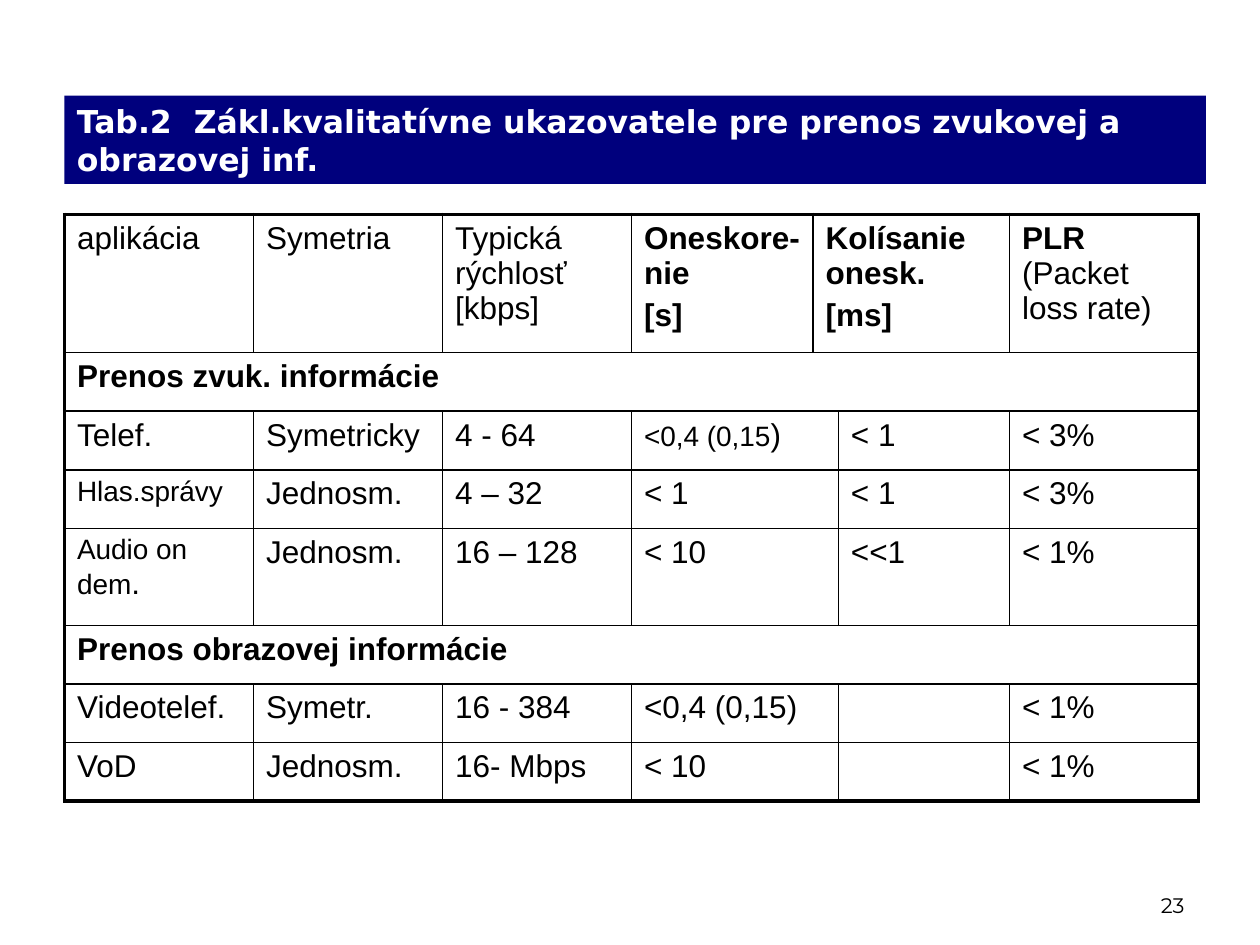
import dataclasses

import lxml.etree
import pptx
import pptx.dml.color
import pptx.enum.shapes
import pptx.enum.text
import pptx.oxml.ns
import pptx.util

Cm, Pt = pptx.util.Cm, pptx.util.Pt
qn = pptx.oxml.ns.qn
MSO_ANCHOR, PP_ALIGN = pptx.enum.text.MSO_ANCHOR, pptx.enum.text.PP_ALIGN

BLACK, WHITE, NAVY = "000000", "FFFFFF", "00007D"
NO_TABLE_STYLE = "{2D5ABB26-0587-4C30-8999-92F81FD0307C}"
THIN, THICK = Pt(1), Pt(2.25)


@dataclasses.dataclass
class Span:
    text: str
    size: float = 18
    bold: bool = False
    font: str = "Arial"
    color: str = BLACK


@dataclasses.dataclass
class Entry:
    """One table cell: its paragraphs and the number of columns it covers."""
    paras: list[list[Span]]
    width: int = 1


def plain(text: str, width: int = 1, size: float = 18) -> Entry:
    return Entry([[Span(text, size)]] if text else [], width)


def strong(*lines: str, width: int = 1) -> Entry:
    return Entry([[Span(line, bold=True)] for line in lines], width)


def mixed(*spans: Span, width: int = 1) -> Entry:
    return Entry([list(spans)], width)


COLUMNS = [3.81, 3.81, 3.81, 3.66, 0.51, 3.45, 3.81]
ROWS = [2.79, 1.18, 1.18, 1.18, 1.96, 1.18, 1.18, 1.18]
ENTRIES = [
    [plain("aplikácia"), plain("Symetria"), plain("Typická rýchlosť [kbps]"),
     strong("Oneskore-nie", "[s]"), strong("Kolísanie onesk.", "[ms]", width=2),
     mixed(Span("PLR ", bold=True), Span("(Packet loss rate)"))],
    [strong("Prenos zvuk. informácie", width=7)],
    [plain("Telef."), plain("Symetricky"), plain("4 - 64"),
     mixed(Span("<0,4 (0,15", 16), Span(")"), width=2), plain("< 1"), plain("< 3%")],
    [plain("Hlas.správy", size=16), plain("Jednosm."), plain("4 – 32"),
     plain("< 1", 2), plain("< 1"), plain("< 3%")],
    [mixed(Span("Audio on dem", 16), Span(".")), plain("Jednosm."), plain("16 – 128"),
     plain("< 10", 2), plain("<<1"), plain("< 1%")],
    [strong("Prenos obrazovej informácie", width=7)],
    [plain("Videotelef."), plain("Symetr."), plain("16 - 384"),
     plain("<0,4 (0,15)", 2), plain(""), plain("< 1%")],
    [plain("VoD"), plain("Jednosm."), plain("16- Mbps"),
     plain("< 10", 2), plain(""), plain("< 1%")],
]


def rgb(value: str) -> pptx.dml.color.RGBColor:
    return pptx.dml.color.RGBColor.from_string(value)


def write(frame, paras: list[list[Span]], before: float = 0, align=PP_ALIGN.LEFT) -> None:
    frame.word_wrap = True
    for index, spans in enumerate(paras):
        para = frame.add_paragraph() if index else frame.paragraphs[0]
        para.alignment = align
        para.space_before = Pt(before)
        for span in spans:
            run = para.add_run()
            run.text = span.text
            run.font.size = Pt(span.size)
            run.font.bold = span.bold
            run.font.name = span.font
            run.font.color.rgb = rgb(span.color)


def set_borders(cell, widths: dict[str, int]) -> None:
    properties = cell._tc.get_or_add_tcPr()
    for side, width in widths.items():
        line = lxml.etree.SubElement(properties, qn(f"a:ln{side}"), w=str(width))
        fill = lxml.etree.SubElement(line, qn("a:solidFill"))
        lxml.etree.SubElement(fill, qn("a:srgbClr"), val=BLACK)


def add_title(page) -> None:
    box = page.shapes.add_shape(pptx.enum.shapes.MSO_SHAPE.RECTANGLE,
                                Cm(1.3), Cm(1.93), Cm(23.01), Cm(1.78))
    box.shadow.inherit = False
    box.fill.solid()
    box.fill.fore_color.rgb = rgb(NAVY)
    box.line.fill.background()
    box.text_frame.vertical_anchor = MSO_ANCHOR.TOP
    box.text_frame.auto_size = pptx.enum.text.MSO_AUTO_SIZE.SHAPE_TO_FIT_TEXT
    title = "Tab.2  Zákl.kvalitatívne ukazovatele pre prenos zvukovej a obrazovej inf."
    write(box.text_frame, [[Span(title, 18, True, "DejaVu Sans", WHITE)]], before=9)


def add_quality_table(page) -> None:
    frame = page.shapes.add_table(len(ROWS), len(COLUMNS), Cm(1.3), Cm(4.32),
                                  Cm(sum(COLUMNS)), Cm(sum(ROWS)))
    table = frame.table
    table.first_row = table.horz_banding = False
    table._tbl.tblPr.find(qn("a:tableStyleId")).text = NO_TABLE_STYLE
    for column, width in zip(table.columns, COLUMNS):
        column.width = Cm(width)
    for row, height in zip(table.rows, ROWS):
        row.height = Cm(height)

    for top, entries in enumerate(ENTRIES):
        left = 0
        for entry in entries:
            end = left + entry.width
            cell = table.cell(top, left)
            if entry.width > 1:
                cell.merge(table.cell(top, end - 1))
            # Thick frame outside, thin rules inside
            set_borders(cell, {
                "L": THICK if left == 0 else THIN,
                "R": THICK if end == len(COLUMNS) else THIN,
                "T": THICK if top == 0 else THIN,
                "B": THICK if top == len(ROWS) - 1 else THIN,
            })
            cell.fill.background()
            write(cell.text_frame, entry.paras, before=3.6)
            left = end


def add_page_number(page) -> None:
    box = page.shapes.add_textbox(Cm(18.21), Cm(17.35), Cm(5.92), Cm(1.27))
    box.text_frame.vertical_anchor = MSO_ANCHOR.BOTTOM
    write(box.text_frame, [[Span("23", 12, font="Montserrat")]], align=PP_ALIGN.RIGHT)


def main() -> None:
    deck = pptx.Presentation()
    deck.slide_width, deck.slide_height = Cm(25.4), Cm(19.05)
    page = deck.slides.add_slide(deck.slide_layouts[6])
    add_page_number(page)
    add_title(page)
    add_quality_table(page)
    deck.save("out.pptx")


if __name__ == "__main__":
    main()
